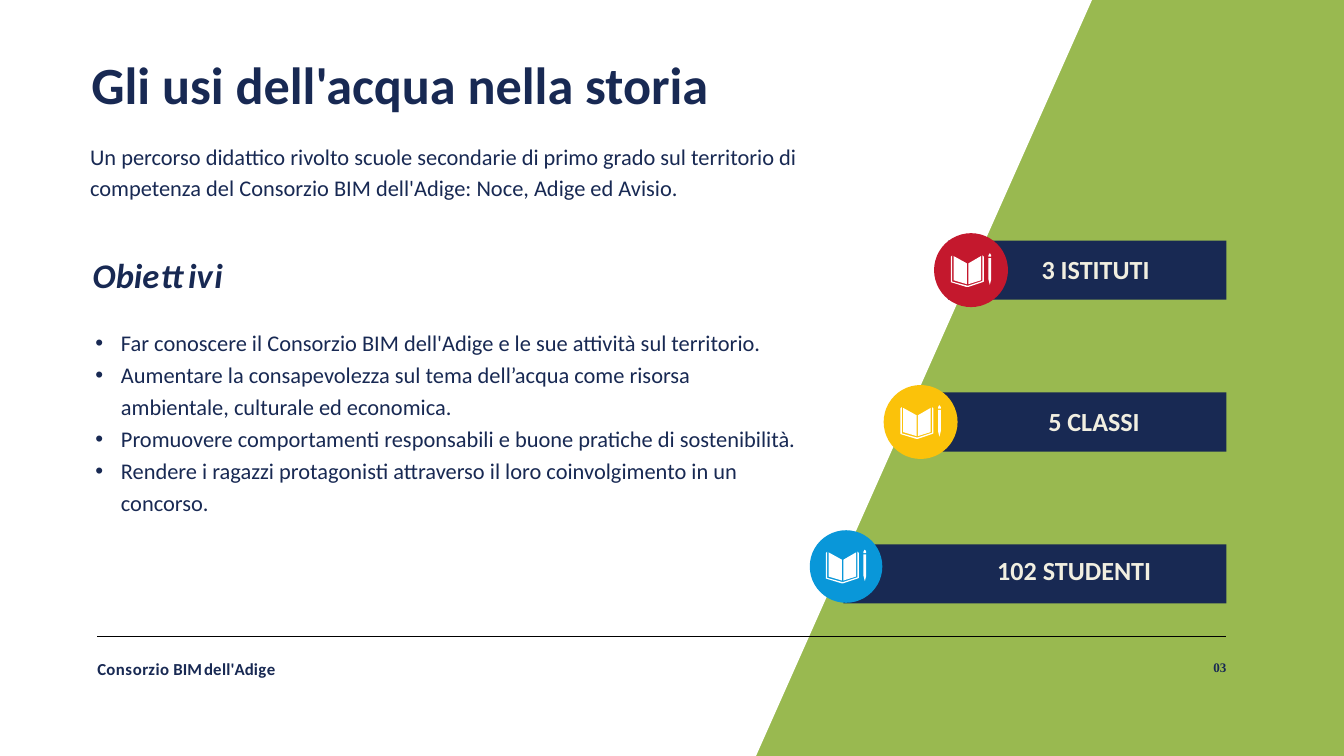
from lxml.etree import SubElement
from pptx import Presentation
from pptx.dml.color import RGBColor
from pptx.enum.shapes import MSO_CONNECTOR, MSO_SHAPE
from pptx.enum.text import MSO_ANCHOR, MSO_AUTO_SIZE, PP_ALIGN
from pptx.oxml.ns import qn
from pptx.util import Inches, Pt

COLORS = {"green": "99B950", "white": "FFFFFF", "navy": "182953", "cream": "F1EFE1",
          "red": "C4182D", "yellow": "FBC20A", "blue": "0997D9", "black": "000000"}

TITLE = "Gli usi dell'acqua nella storia"
INTRO = ("Un percorso didattico rivolto scuole secondarie di primo grado sul territorio di "
         "competenza del Consorzio BIM dell'Adige: Noce, Adige ed Avisio.")
GOALS = [
    "Far conoscere il Consorzio BIM dell'Adige e le sue attività sul territorio.",
    "Aumentare la consapevolezza sul tema dell’acqua come risorsa ambientale, "
    "culturale ed economica.",
    "Promuovere comportamenti responsabili e buone pratiche di sostenibilità.",
    "Rendere i ragazzi protagonisti attraverso il loro coinvolgimento in un concorso.",
]
# Letter-spaced runs: text, tracking in points
HEADING = [("O", -0.3), ("b", -0.6), ("i", -0.9), ("e", 1.6), ("tt", 1.9),
           ("i", -0.9), ("v", 1.6), ("i", -0.8)]
FOOTER = [("C", -1.6), ("o", 0.6), ("n", 0.5), ("s", 0.7), ("o", 0.6), ("r", -0.2),
          ("zi", 0.6), ("o ", 0.2), ("B", -0.4), ("I", -0.1), ("M ", -1.9), ("d", 0),
          ("e", 0.7), ("ll", 0.1), ("'", -1.5), ("A", -1.4), ("d", 0), ("i", 0.6),
          ("g", 0.5), ("e", 0.3)]
PAGE = "03"
# Label, badge colour, bar left, badge centre x and y, badge diameter, label box
FIGURES = [
    ("3 ISTITUTI", "red", 14.11, (14.45, 4.02), 1.1, (15.5, 3.75, 2.08, 0.49)),
    ("5 CLASSI", "yellow", 13.9, (13.7, 6.28), 1.1, (15.6, 6.01, 1.89, 0.49)),
    ("102 STUDENTI", "blue", 12.55, (12.59, 8.43), 1.08, (14.84, 8.23, 2.66, 0.49)),
]
# Outlines in hundredths of an inch
PANEL = [[(0, 0), (1625, 0), (1125, 1125), (0, 1125)]]
BOOK_AND_PEN = [
    [(24, 15), (4, 4), (4, 40), (24, 46)],
    [(45, 4), (26, 15), (26, 46), (45, 40)],
    [(49, 5), (47, 3), (47, 41), (26, 48), (24, 48), (2, 42), (2, 3),
     (0, 5), (0, 43), (23, 50), (26, 50), (47, 43), (49, 42)],
    [(60, 7), (56, 7), (56, 39), (58, 47), (60, 39)],
    [(60, 3), (59, 1), (58, 0), (57, 1), (56, 3), (56, 5), (60, 5)],
]

WIDTH, HEIGHT = 20, 11.25
LEFT, RIGHT = 1.45, 18.25
BAR_TOP, BAR_STEP, BAR_HEIGHT = 3.58, 2.26, 0.88
RULE_Y, FOOTER_Y = 9.47, 9.79
ICON_WIDTH, ICON_HEIGHT = 0.6, 0.5

prs = Presentation()
prs.slide_width, prs.slide_height = Inches(WIDTH), Inches(HEIGHT)
slide = prs.slides.add_slide(prs.slide_layouts[1])
shapes = slide.shapes


def rgb(name):
    return RGBColor.from_string(COLORS[name])


def paint(shape, color):
    shape.shadow.inherit = False
    shape.fill.solid()
    shape.fill.fore_color.rgb = rgb(color)
    shape.line.fill.background()


def preset(kind, box, color):
    paint(shapes.add_shape(kind, *map(Inches, box)), color)


def outline(contours, left, top, color):
    """Draw closed contours, given in hundredths of an inch, as one shape."""
    first, *others = contours
    builder = shapes.build_freeform(*first[0], scale=Inches(1) / 100)
    builder.add_line_segments(first[1:], close=True)
    for contour in others:
        builder.move_to(*contour[0])
        builder.add_line_segments(contour[1:], close=True)
    paint(builder.convert_to_shape(Inches(left), Inches(top)), color)


def set_frame(shape, box, inset_top=0.01):
    shape.left, shape.top, shape.width, shape.height = map(Inches, box)
    frame = shape.text_frame
    frame.margin_left = frame.margin_right = frame.margin_bottom = 0
    frame.margin_top = Inches(inset_top)
    frame.word_wrap = True
    frame.auto_size = MSO_AUTO_SIZE.NONE
    frame.vertical_anchor = MSO_ANCHOR.TOP
    return frame


def text_box(box, inset_top=0.01):
    return set_frame(shapes.add_textbox(*map(Inches, box)), box, inset_top)


def write(paragraph, runs, size, color="navy", bold=False, italic=False,
          font="Calibri", align=PP_ALIGN.LEFT, spacing=None):
    """Fill a paragraph from a string or from (text, tracking) runs."""
    paragraph.alignment = align
    paragraph.space_before = Pt(0)
    if spacing:
        paragraph.line_spacing = spacing
    for text, tracking in [(runs, 0)] if isinstance(runs, str) else runs:
        run = paragraph.add_run()
        run.text = text
        run.font.name, run.font.size = font, Pt(size)
        run.font.bold, run.font.italic = bold, italic
        run.font.color.rgb = rgb(color)
        if tracking:
            run.font._element.set("spc", str(round(tracking * 100)))


def add_bullet(paragraph):
    properties = paragraph._p.get_or_add_pPr()
    properties.set("marL", str(Inches(0.39)))
    properties.set("indent", str(Inches(-0.38)))
    SubElement(properties, qn("a:buChar")).set("char", "•")


# Background and rule
preset(MSO_SHAPE.RECTANGLE, (0, 0, WIDTH, HEIGHT), "green")
outline(PANEL, 0, 0, "white")
rule = shapes.add_connector(MSO_CONNECTOR.STRAIGHT, Inches(LEFT), Inches(RULE_Y),
                            Inches(RIGHT), Inches(RULE_Y))
rule.line.color.rgb = rgb("black")
rule.line.width = Pt(0.75)
SubElement(rule._element.spPr, qn("a:effectLst"))

# Key figures
for row, (label, color, bar_left, (x, y), size, label_box) in enumerate(FIGURES):
    bar_top = BAR_TOP + row * BAR_STEP
    preset(MSO_SHAPE.RECTANGLE, (bar_left, bar_top, RIGHT - bar_left, BAR_HEIGHT), "navy")
    preset(MSO_SHAPE.OVAL, (x - size / 2, y - size / 2, size, size), color)
    outline(BOOK_AND_PEN, x - ICON_WIDTH / 2, y - ICON_HEIGHT / 2, "white")
    write(text_box(label_box, 0.02).paragraphs[0], label, 28, "cream", bold=True)

# Title and goals, brought in front of the panel
title, goals = shapes.title, slide.placeholders[1]
for placeholder in (title, goals):
    shapes._spTree.append(placeholder._element)
write(set_frame(title, (1.36, 0.77, 10.23, 0.96)).paragraphs[0], TITLE, 56, bold=True)

goals_frame = set_frame(goals, (1.41, 4.82, 10.49, 3.35))
for index, goal in enumerate(GOALS):
    item = goals_frame.add_paragraph() if index else goals_frame.paragraphs[0]
    add_bullet(item)
    write(item, goal, 24, spacing=1.17)
    if index:
        item.space_before = Pt(0.9)

# Intro, heading and footer
write(text_box((1.34, 2.05, 10.55, 0.93)).paragraphs[0], INTRO, 24, spacing=1.17)
write(text_box((1.38, 3.76, 2.14, 0.65), 0.02).paragraphs[0], HEADING, 37,
      bold=True, italic=True)
write(text_box((LEFT, FOOTER_Y, 2.79, 0.33)).paragraphs[0], FOOTER, 18, bold=True)
write(text_box((RIGHT - 0.39, FOOTER_Y, 0.39, 0.26), 0.02).paragraphs[0], PAGE, 14,
      bold=True, font="Times New Roman", align=PP_ALIGN.RIGHT)

prs.save("out.pptx")
